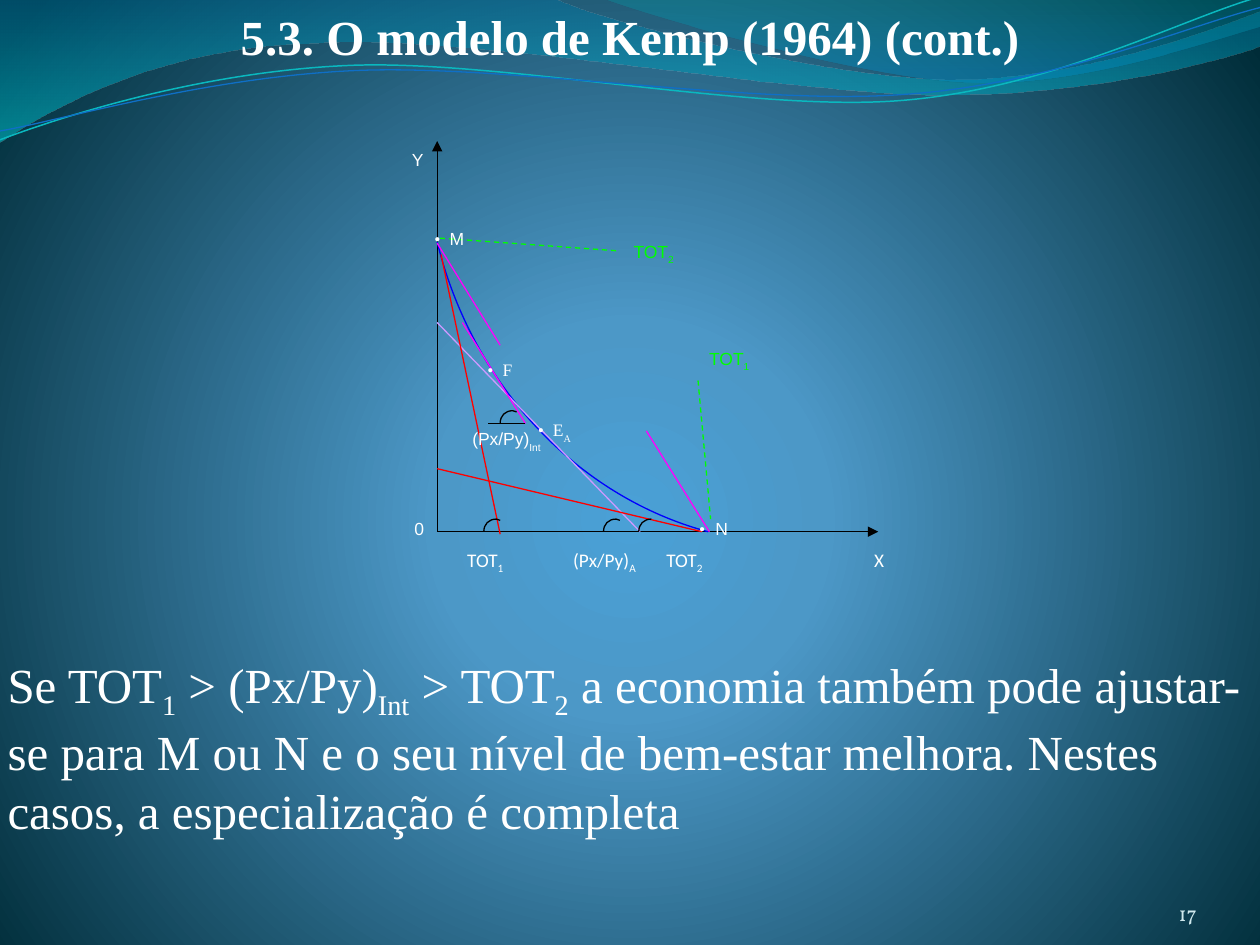
from dataclasses import dataclass
from lxml.etree import SubElement
from pptx import Presentation
from pptx.dml.color import RGBColor
from pptx.enum.dml import MSO_LINE
from pptx.enum.shapes import MSO_CONNECTOR
from pptx.enum.text import MSO_ANCHOR, MSO_AUTO_SIZE, PP_ALIGN
from pptx.oxml.ns import qn
from pptx.util import Emu, Pt

PX = 9144  # 100 px to the inch


@dataclass(frozen=True)
class Theme:
    white: str = "FFFFFF"
    black: str = "000000"
    pale: str = "D1EAEE"
    blue: str = "0000FF"
    lilac: str = "CC99FF"
    red: str = "FF0000"
    pink: str = "FF00FF"
    green: str = "00FF00"
    teal: str = "0AB8BF"
    navy: str = "0F6FC6"
    back: tuple = ((0, "4AA0D6", 100), (25, "4C98C7", 100), (100, "002C38", 100))
    wide: tuple = ((0, "0074A1", 45), (100, "00C6CF", 55))
    thin: tuple = ((0, "00A1A9", 30), (80, "008BBF", 45))
    serif: str = "Times New Roman"
    sans: str = "Arial"
    tick: str = "Calibri"
    num: str = "Vollkorn"
    big: int = 28
    mid: int = 12
    axis: int = 11
    small: int = 10
    line: float = 0.75


T = Theme()


def px(*vals):
    return [Emu(round(v * PX)) for v in vals]


def shade(root, fill, stops, focus=None):
    """Gradient with alpha: downward, or round when a focus rectangle is given."""
    fill.gradient()
    grad = root.find(".//" + qn("a:gradFill"))
    for part in list(grad):
        grad.remove(part)
    rows = SubElement(grad, qn("a:gsLst"))
    for pos, color, alpha in stops:
        stop = SubElement(rows, qn("a:gs"), pos=str(pos * 1000))
        tint = SubElement(stop, qn("a:srgbClr"), val=color)
        if alpha < 100:
            SubElement(tint, qn("a:alpha"), val=str(alpha * 1000))
    if focus:
        ring = SubElement(grad, qn("a:path"), {"path": "circle"})
        SubElement(ring, qn("a:fillToRect"), {k: str(v * 1000) for k, v in focus.items()})
    else:
        SubElement(grad, qn("a:lin"), ang="5400000", scaled="1")


def bend(shape, parts):
    """Turn each run of three line segments into one cubic curve."""
    track = shape.element.find(".//" + qn("a:path"))
    steps = iter(track.findall(qn("a:lnTo")))
    for part in parts:
        group = [next(steps) for _ in part]
        if len(group) == 3:
            curve = SubElement(track, qn("a:cubicBezTo"))
            group[0].addprevious(curve)
            for step in group:
                curve.append(step[0])
                track.remove(step)


def outline(slide, box, start, *parts, color=None, width=T.line, stops=None, hub=None):
    """Outline of lines (one point) and curves (three); hub widens the frame."""
    def at(spot):
        return box[0] + spot[0], box[1] + spot[1]

    pen = slide.shapes.build_freeform(*at(start), scale=PX)
    pen.add_line_segments([at(spot) for part in parts for spot in part], close=bool(stops))
    if hub:
        pen.move_to(*at(hub))
    shape = pen.convert_to_shape()
    bend(shape, parts)
    shape.shadow.inherit = False
    if stops:
        shade(shape.element, shape.fill, stops)
        shape.line.fill.background()
    else:
        shape.fill.background()
        shape.line.color.rgb = RGBColor.from_string(color)
        shape.line.width = Pt(width)


def stroke(slide, box, ends, color, dash=False, arrow=False):
    x, y = box[:2]
    x1, y1, x2, y2 = ends
    line = slide.shapes.add_connector(MSO_CONNECTOR.STRAIGHT, *px(x + x1, y + y1, x + x2, y + y2))
    line.line.color.rgb = RGBColor.from_string(color)
    line.line.width = Pt(T.line)
    if dash:
        line.line.dash_style = MSO_LINE.DASH
    props = line.element.spPr
    if arrow:
        SubElement(props.find(qn("a:ln")), qn("a:tailEnd"), type="triangle")
    SubElement(props, qn("a:effectLst"))


def write(shape, text, font, size, color=T.white, bold=False, low=-30, **frame):
    """Fill a text frame; underscores switch subscript on and off."""
    body = shape.text_frame
    for name, val in {"word_wrap": True, "auto_size": MSO_AUTO_SIZE.NONE, **frame}.items():
        setattr(body, name, val)
    para = body.paragraphs[0]
    para.space_before = Pt(0)
    for i, piece in enumerate(text.split("_")):
        run = para.add_run()
        run.text = piece
        for name, val in {"name": font, "size": Pt(size), "bold": bold}.items():
            setattr(run.font, name, val)
        run.font.color.rgb = RGBColor.from_string(color)
        if i % 2:
            run._r.get_or_add_rPr().set("baseline", str(low * 1000))
    return para


def label(slide, box, spot, text, font=T.sans, size=T.small, **look):
    x, y, wide = spot
    area = slide.shapes.add_textbox(*px(box[0] + x, box[1] + y, wide, 40))
    return write(area, text, font, size, **look)


def hang(para, gap=0):
    """Hanging indent without an automatic bullet."""
    props = para._p.get_or_add_pPr()
    props.set("marL", str(gap * PX))
    props.set("indent", str(-gap * PX))
    SubElement(props, qn("a:buNone"))


def waves(slide, box):
    # Translucent bands
    outline(slide, box, (0, 0), [(440, -1)], [(476, 17), (664, 63), (758, 63)],
            [(853, 63), (958, 26), (1000, 9)], [(1001, 36)], [(983, 44), (870, 76), (746, 75)],
            [(622, 75), (382, 28), (257, 34)], [(129, 36), (46, 83), (-1, 113)], stops=T.wide)
    outline(slide, box, (479, -1), [(509, 11), (682, 62), (769, 65)],
            [(856, 69), (961, 32), (1000, 21)], [(1000, 0)], stops=T.thin)
    # Fine lines
    outline(slide, box, (0, 111), [(48, 93), (158, 57), (277, 52)], [(395, 47), (593, 89), (713, 80)],
            [(833, 71), (938, 15), (998, -2)], color=T.teal, width=0.85)
    outline(slide, box, (0, 104), [(47, 96), (164, 61), (283, 56)], [(403, 51), (597, 84), (717, 75)],
            [(836, 67), (941, 21), (1000, 6)], color=T.navy)


def graph(slide, box):
    wide, high = box[2:]
    # Axes
    for end in ((0, 0), (wide, high)):
        stroke(slide, box, (0, high, *end), T.black, arrow=True)
    # Production frontier
    outline(slide, box, (215, high), [(111, 282), (28, 194), (0, 80)], color=T.blue, hub=(287, -5))
    # Price lines
    for color, ends in (
        (T.lilac, (0, 144, 161, high)), (T.red, (210, high, 0, 260)), (T.red, (3, 90, 50, 312)),
        (T.pink, (20, 144, 70, 224)), (T.pink, (0, 81, 50, 162)), (T.pink, (166, 230, 216, high)),
        (T.black, (70, 224, 40, 224)),
    ):
        stroke(slide, box, ends, color)
    for ends in ((207, 190, 217, 300), (142, 87, 2, 77)):
        stroke(slide, box, ends, T.green, dash=True)
    # Angle marks
    for x, y, tail in ((160, high, 0), (132, high, 1), (37, high, 1), (50, 224, 1)):
        hook = [[(x + 11, y - 10), (x + 12, y - 10), (x + 13, y - 9)]] * tail
        outline(slide, box, (x, y), [(x, y - 6), (x + 4, y - 10), (x + 10, y - 10)], *hook,
                color=T.black)
    # Point and axis names
    for text, *spot in (("0", -28, 294, 60), ("M", 0, 64, 60), ("N", 211, 294, 60),
                        ("Y", -30, 1, 60), ("(Px/Py)_Int", 18, 223, 80)):
        label(slide, box, spot, text)
    for spot in ((-12, 64, 60), (198, 294, 60)):
        label(slide, box, spot, "•", T.serif)
    for text, *spot in (("•\tE_A", 70, 216, 60), ("•\tF", 30, 168, 60)):
        hang(label(slide, box, spot, text, T.serif), 12)
    for text, *spot in (("TOT_1", 206, 159, 136), ("TOT_2", 146, 74, 126)):
        label(slide, box, spot, text, color=T.green)
    for text, x, w in (("TOT_1", 14, 60), ("(Px/Py)_A", 98, 79), ("TOT_2", 172, 60), ("X", 337, 60)):
        label(slide, box, (x, high + 8, w), text, T.tick, T.axis, low=-25)


def place(slide, hold, box):
    hold.left, hold.top, hold.width, hold.height = px(*box)
    slide.shapes.element.append(hold.element)  # bring to front


def head(slide, box):
    title = slide.shapes.title
    place(slide, title, box)
    para = write(title, "5.3. O modelo de Kemp (1964) (cont.)", T.serif, T.big, bold=True,
                 vertical_anchor=MSO_ANCHOR.TOP)
    para.alignment = PP_ALIGN.CENTER


def prose(slide, box):
    body = slide.placeholders[1]
    place(slide, body, box)
    hang(write(body, "Se TOT_1_ > (Px/Py)_Int_ > TOT_2_ a economia também pode ajustar-se para M ou N "
               "e o seu nível de bem-estar melhora. Nestes casos, a especialização é completa",
               T.serif, T.big, low=-25, vertical_anchor=MSO_ANCHOR.MIDDLE))


def foot(slide, box):
    area = slide.shapes.add_textbox(*px(*box))
    flat = dict.fromkeys(("margin_left", "margin_top", "margin_right", "margin_bottom"), 0)
    para = write(area, "17", T.num, T.mid, T.pale, vertical_anchor=MSO_ANCHOR.BOTTOM, **flat)
    para.alignment = PP_ALIGN.RIGHT


def main():
    deck = Presentation()
    deck.slide_width, deck.slide_height = px(1000, 750)
    slide = deck.slides.add_slide(deck.slide_layouts[1])
    shade(slide.element, slide.background.fill, T.back, {"l": 10, "t": 110, "r": 10, "b": 100})
    waves(slide, (0, 0, 1000, 114))
    head(slide, (0, 0, 1000, 57))
    foot(slide, (867, 695, 83, 40))
    graph(slide, (347, 112, 350, 310))
    prose(slide, (-4, 517, 1000, 151))
    deck.save("out.pptx")


if __name__ == "__main__":
    main()
